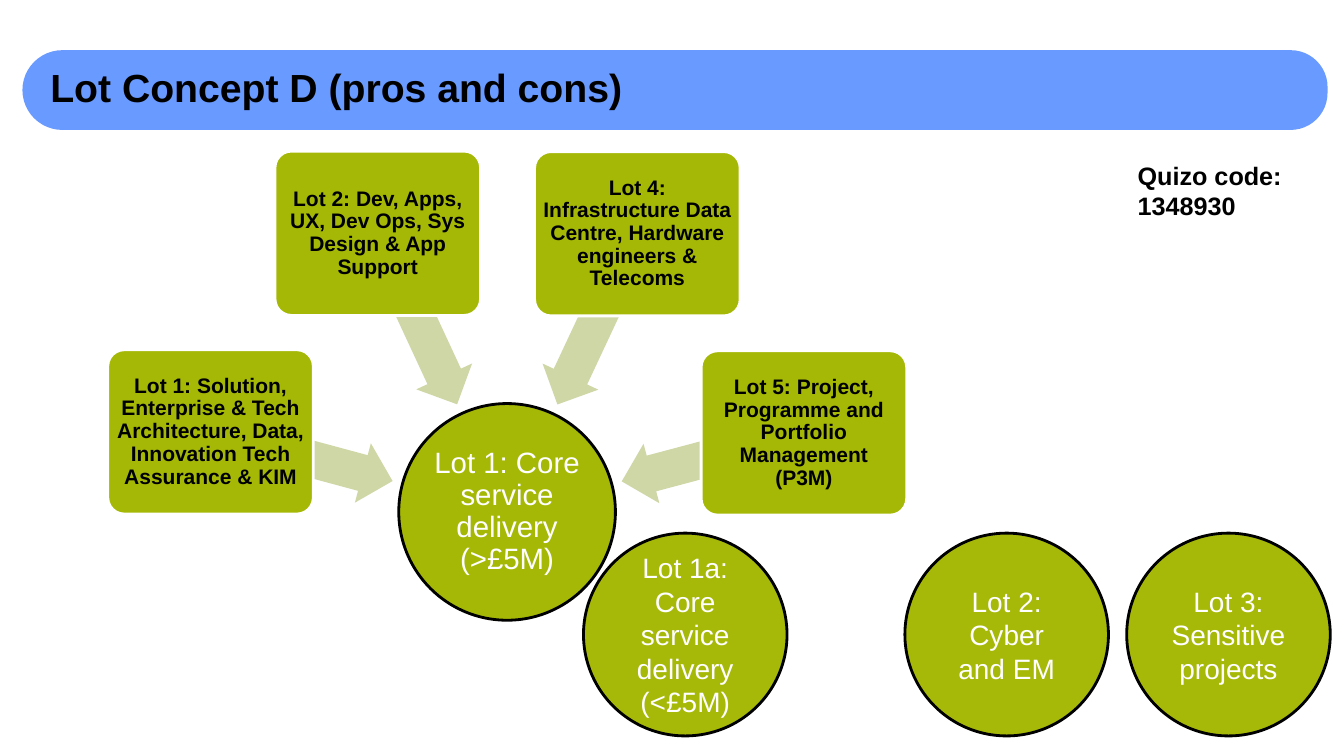
from math import cos, radians, sin

from pptx import Presentation
from pptx.dml.color import RGBColor
from pptx.enum.shapes import MSO_SHAPE
from pptx.enum.text import MSO_ANCHOR, PP_ALIGN
from pptx.util import Cm, Pt

OVAL, BOX = MSO_SHAPE.OVAL, MSO_SHAPE.ROUNDED_RECTANGLE
ARROW, BAND = MSO_SHAPE.LEFT_ARROW, MSO_SHAPE.ROUND_2_SAME_RECTANGLE
TOP, MIDDLE = MSO_ANCHOR.TOP, MSO_ANCHOR.MIDDLE
LEFT, CENTER = PP_ALIGN.LEFT, PP_ALIGN.CENTER

# Content
TITLE = "Lot Concept D (pros and cons)"
NOTE = "Quizo code: 1348930"
CORE = "Lot 1: Core service delivery (>£5M)"
FEEDS = [
    "Lot 1: Solution, Enterprise & Tech Architecture, Data, Innovation Tech Assurance & KIM",
    "Lot 2: Dev, Apps, UX, Dev Ops, Sys Design & App Support",
    "Lot 4: Infrastructure Data Centre, Hardware engineers & Telecoms",
    "Lot 5: Project, Programme and Portfolio Management (P3M)",
]
SMALL = ("Lot 1a: Core service delivery (<£5M)", 17.27)
SIDES = [("Lot 2: Cyber and EM", 25.37), ("Lot 3: Sensitive projects", 30.96)]

COLORS = {"band": "699AFF", "core": "A4B805", "side": "A6B808",
          "arrow": "CFD7A7", "dark": "000000", "light": "FFFFFF"}

# Layout in centimetres; places are centres
HUB = (12.78, 12.9)
BOX_ARM, ARROW_ARM = 7.74, 5.37
START, STEP = 195.1, 50
SIDE_Y = 15.99

# Text formats: pad is (left and right, top and bottom)
TEXT = {
    "title": dict(size=28, bold=True, color="dark", align=LEFT, anchor=TOP, space=1, pad=(0, 0)),
    "note": dict(size=18, bold=True, color="dark", align=LEFT, anchor=TOP, space=1, pad=(0.25, 0.25)),
    "core": dict(size=21, bold=False, color="light", align=CENTER, anchor=MIDDLE, space=0.9, pad=(0.03, 0.03)),
    "feed": dict(size=15, bold=True, color="dark", align=CENTER, anchor=MIDDLE, space=0.9, pad=(0.08, 0.08)),
    "side": dict(size=20, bold=False, color="light", align=CENTER, anchor=MIDDLE, space=1, pad=(0.25, 0.13)),
}

deck = Presentation()
deck.slide_width, deck.slide_height = Cm(33.87), Cm(19.05)
slide = deck.slides.add_slide(deck.slide_layouts[6])


def rgb(name):
    return RGBColor.from_string(COLORS[name])


def frame(spot, size):
    """Turn a centre and a size into left, top, width and height."""
    (x, y), (w, h) = spot, size
    return Cm(x - w / 2), Cm(y - h / 2), Cm(w), Cm(h)


def write(shape, text, style):
    form = TEXT[style]
    body = shape.text_frame
    body.text = text
    para = body.paragraphs[0]
    across, down = (Cm(n) for n in form["pad"])
    font = para.runs[0].font
    font.color.rgb = rgb(form["color"])
    jobs = [
        (body, dict(word_wrap=True, vertical_anchor=form["anchor"],
                    margin_left=across, margin_right=across,
                    margin_top=down, margin_bottom=down)),
        (para, dict(alignment=form["align"], line_spacing=form["space"])),
        (font, dict(name="Arial", size=Pt(form["size"]), bold=form["bold"])),
    ]
    for part, values in jobs:
        for key, value in values.items():
            setattr(part, key, value)


def draw(kind, spot, size, fill, line=None, turn=0, adjust=()):
    shape = slide.shapes.add_shape(kind, *frame(spot, size))
    shape.shadow.inherit = False
    shape.rotation = turn
    for i, value in enumerate(adjust):
        shape.adjustments[i] = value
    shape.fill.solid()
    shape.fill.fore_color.rgb = rgb(fill)
    if line:
        shape.line.color.rgb = rgb(line)
        shape.line.width = Pt(2)
    else:
        shape.line.fill.background()
    return shape


def label(text, spot, size, style):
    write(slide.shapes.add_textbox(*frame(spot, size)), text, style)


def side(text, x):
    write(draw(OVAL, (x, SIDE_Y), (5.13, 5.11), "side", "dark"), text, "side")


def polar(arm, angle):
    """Give the point at this distance and angle from the hub."""
    turn = radians(angle)
    return HUB[0] + arm * cos(turn), HUB[1] + arm * sin(turn)


draw(BAND, (17.01, 2.27), (2.01, 32.89), "band", turn=90, adjust=(0.463, 0.5))
side(*SMALL)
label(TITLE, (14.58, 2.34), (26.62, 1.47), "title")
write(draw(OVAL, HUB, (5.46, 5.46), "core", "dark"), CORE, "core")

for i, text in enumerate(FEEDS):
    angle = START + i * STEP
    draw(ARROW, polar(ARROW_ARM, angle), (4.76, 1.55), "arrow", turn=angle, adjust=(0.6, 0.5))
    box = draw(BOX, polar(BOX_ARM, angle), (5.18, 4.14), "core", "light", adjust=(0.1,))
    write(box, text, "feed")

for text, x in SIDES:
    side(text, x)
label(NOTE, (30.96, 4.58), (5.08, 1.6), "note")

deck.save("out.pptx")
